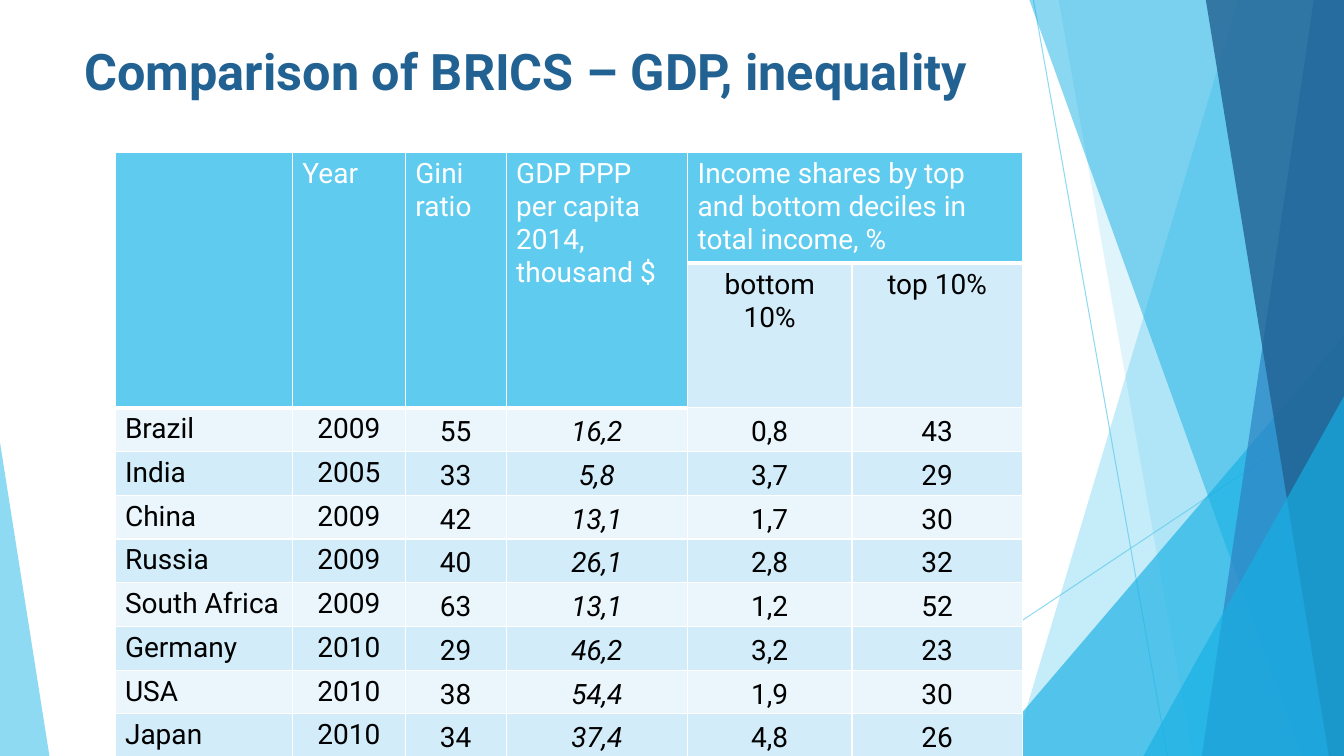
from dataclasses import dataclass

from lxml import etree
from pptx import Presentation
from pptx.dml.color import RGBColor
from pptx.enum.shapes import MSO_CONNECTOR, MSO_SHAPE
from pptx.enum.text import MSO_ANCHOR, PP_ALIGN
from pptx.oxml import parse_xml
from pptx.oxml.ns import nsdecls, qn
from pptx.util import Inches, Pt

FONT = "Roboto"
COLORS = {
    "sky": "5FCBEF", "cyan": "17B0E4", "blue": "2E83C3", "navy": "226292",
    "white": "FFFFFF", "black": "000000", "band_light": "EAF6FC", "band_dark": "D2ECF9",
}

HEADERS = ["", "Year", "Gini ratio", "GDP PPP per capita 2014, thousand $",
           "Income shares by top and bottom deciles in total income, %", ""]
SUBHEADERS = ["", "", "", "", "bottom 10%", "top 10%"]
COUNTRIES = [
    ["Brazil", "2009", "55", "16,2", "0,8", "43"],
    ["India", "2005", "33", "5,8", "3,7", "29"],
    ["China", "2009", "42", "13,1", "1,7", "30"],
    ["Russia", "2009", "40", "26,1", "2,8", "32"],
    ["South Africa", "2009", "63", "13,1", "1,2", "52"],
    ["Germany", "2010", "29", "46,2", "3,2", "23"],
    ["USA", "2010", "38", "54,4", "1,9", "30"],
    ["Japan", "2010", "34", "37,4", "4,8", "26"],
]
COLUMN_WIDTHS = [1.76, 1.12, 1, 1.8, 1.63, 1.69]
ROW_HEIGHTS = [1.08, 1.41] + [0.43] * len(COUNTRIES)
YEAR, GDP, BOTTOM_DECILE = 1, 3, 4

# Lines: start and end, in one-inch grid units from the panel's corner
RAYS = [((0.48, 0), (1.81, 7.5)), ((3.56, 4.03), (-1.65, 7.5))]
# Facets reach the panel's right edge: left end at top, left end at bottom, colour, opacity
BACK_FACETS = [(2.51, 0.27, "sky", 36), (0.73, 2.06, "sky", 20)]
FRONT_FACETS = [(0.44, 3.14, "cyan", 50), (3.26, 2.15, "blue", 70), (2.19, 3.41, "navy", 80)]


@dataclass
class Box:
    """An area measured in one-inch grid columns and rows."""
    left: float
    top: float
    width: float
    height: float

    def emu(self):
        return [Inches(n) for n in (self.left, self.top, self.width, self.height)]

    def from_corner(self, column, row):
        return Inches(self.left + column), Inches(self.top + row)


def rgb(name):
    return RGBColor.from_string(COLORS[name])


def set_opacity(fill_owner, percent):
    color = fill_owner.find(".//" + qn("a:srgbClr"))
    etree.SubElement(color, qn("a:alpha")).set("val", str(percent * 1000))


def paint(shape, color, opacity):
    shape.shadow.inherit = False
    shape.fill.solid()
    shape.fill.fore_color.rgb = rgb(color)
    set_opacity(shape.fill._xPr, opacity)
    shape.line.fill.background()


def add_wedge(slide, box, apex, color, opacity):
    """Right triangle on the box's base; apex is 0 for left, 1 for right."""
    wedge = slide.shapes.add_shape(MSO_SHAPE.ISOSCELES_TRIANGLE, *box.emu())
    wedge.adjustments[0] = apex
    paint(wedge, color, opacity)


def add_facet(slide, box, top_left, bottom_left, color, opacity):
    corners = [box.from_corner(column, row) for column, row in (
        (top_left, 0), (box.width, 0), (box.width, box.height), (bottom_left, box.height))]
    outline = slide.shapes.build_freeform(*corners[0])
    outline.add_line_segments(corners[1:], close=True)
    paint(outline.convert_to_shape(), color, opacity)


def add_ray(slide, box, start, end):
    ray = slide.shapes.add_connector(
        MSO_CONNECTOR.STRAIGHT, *box.from_corner(*start), *box.from_corner(*end))
    ray.line.color.rgb = rgb("sky")
    ray.line.width = Pt(0.75)
    properties = ray._element.spPr
    set_opacity(properties, 70)
    etree.SubElement(properties, qn("a:effectLst"))


def add_facet_panel(slide, box):
    for start, end in RAYS:
        add_ray(slide, box, start, end)
    for facet in BACK_FACETS:
        add_facet(slide, box, *facet)
    add_wedge(slide, Box(box.left, 3.33, box.width, box.height - 3.33), 1, "cyan", 66)
    for facet in FRONT_FACETS:
        add_facet(slide, box, *facet)
    add_wedge(slide, Box(box.left + 1.57, 3.93, box.width - 1.57, box.height - 3.93),
              1, "cyan", 66)


def write(paragraph, text, size, color, bold=False, italic=False):
    run = paragraph.add_run()
    run.text = text
    font = run.font
    font.name, font.size, font.bold, font.italic = FONT, Pt(size), bold, italic
    font.color.rgb = rgb(color)


def add_title(slide, box):
    frame = slide.shapes.add_textbox(*box.emu()).text_frame
    frame.word_wrap = True
    frame.vertical_anchor = MSO_ANCHOR.TOP
    write(frame.paragraphs[0], "Comparison of BRICS – GDP, inequality", 36, "navy", bold=True)


def set_borders(cell, bottom_width):
    properties = cell._tc.get_or_add_tcPr()
    for index, (side, width) in enumerate(zip("LRTB", (1, 1, 1, bottom_width))):
        properties.insert(index, parse_xml(
            f'<a:ln{side} {nsdecls("a")} w="{Pt(width)}"><a:solidFill>'
            f'<a:srgbClr val="{COLORS["white"]}"/></a:solidFill></a:ln{side}>'))


def fill_cell(cell, row, column, text):
    is_header = row == 0 or (row == 1 and column < BOTTOM_DECILE)
    is_value = row > 1 and column >= YEAR
    band = "band_dark" if row % 2 else "band_light"
    cell.fill.solid()
    cell.fill.fore_color.rgb = rgb("sky" if is_header else band)
    set_borders(cell, 3 if row == 0 else 1)
    paragraph = cell.text_frame.paragraphs[0]
    if is_value or (row == 1 and not is_header):
        paragraph.alignment = PP_ALIGN.CENTER
    if is_value:
        paragraph.line_spacing = 1.15
        cell.margin_left = cell.margin_right = Inches(0.07)
        cell.margin_top = cell.margin_bottom = 0
        if column > YEAR:
            cell.vertical_anchor = MSO_ANCHOR.MIDDLE
    if text:
        write(paragraph, text, 20, "white" if is_header else "black",
              italic=is_value and column == GDP)


def add_inequality_table(slide, box):
    rows = [HEADERS, SUBHEADERS] + COUNTRIES
    table = slide.shapes.add_table(len(rows), len(HEADERS), *box.emu()).table
    for column, width in zip(table.columns, COLUMN_WIDTHS):
        column.width = Inches(width)
    for row, height in zip(table.rows, ROW_HEIGHTS):
        row.height = Inches(height)
    for column in range(BOTTOM_DECILE):
        table.cell(0, column).merge(table.cell(1, column))
    table.cell(0, BOTTOM_DECILE).merge(table.cell(0, BOTTOM_DECILE + 1))
    for row, texts in enumerate(rows):
        for column, text in enumerate(texts):
            fill_cell(table.cell(row, column), row, column, text)


def main():
    deck = Presentation()
    deck.slide_width, deck.slide_height = Inches(13.33), Inches(7.5)
    slide = deck.slides.add_slide(deck.slide_layouts[6])
    add_facet_panel(slide, Box(9.77, 0, 3.56, 7.5))
    add_wedge(slide, Box(0, 4.39, 0.49, 3.11), 0, "sky", 70)
    add_title(slide, Box(0.74, 0.35, 9.4, 0.92))
    add_inequality_table(slide, Box(1.14, 1.51, sum(COLUMN_WIDTHS), sum(ROW_HEIGHTS)))
    deck.save("out.pptx")


if __name__ == "__main__":
    main()
